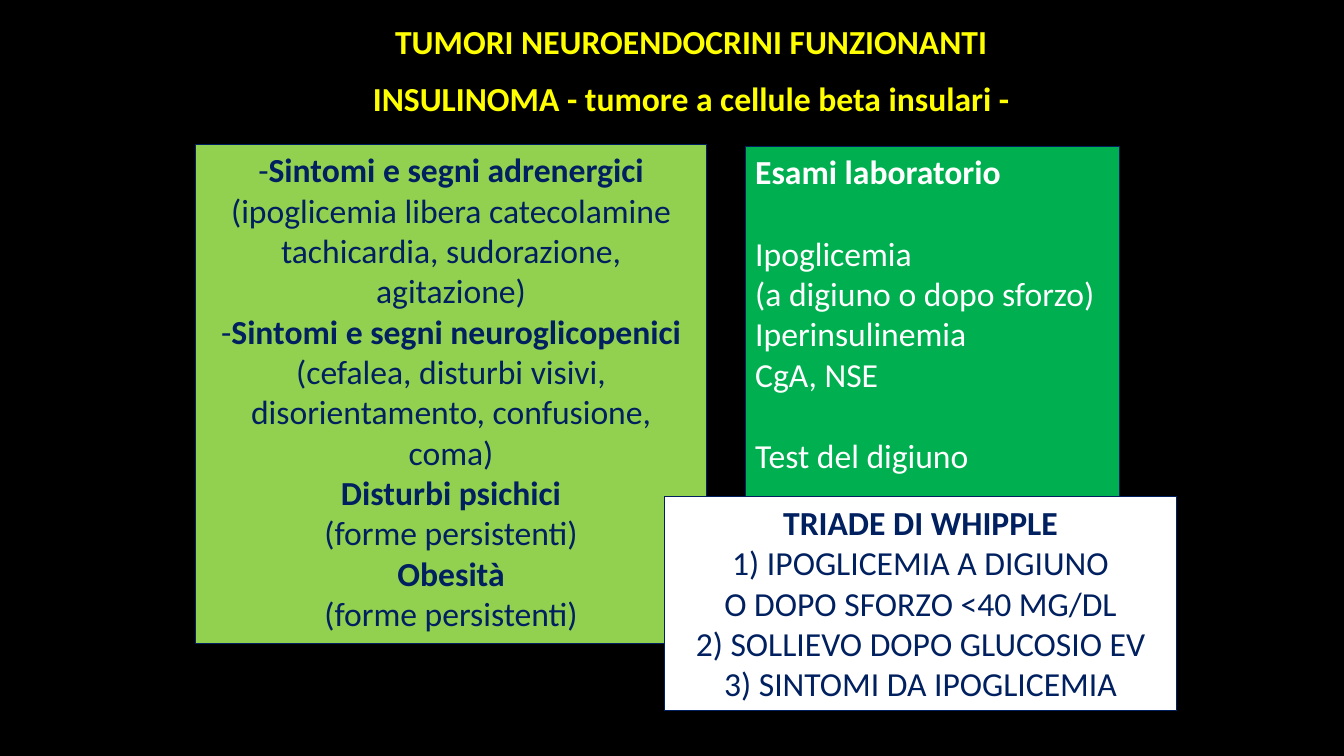
from dataclasses import dataclass

from lxml import etree
from pptx import Presentation
from pptx.dml.color import RGBColor
from pptx.enum.shapes import MSO_SHAPE
from pptx.enum.text import MSO_ANCHOR, MSO_AUTO_SIZE, PP_ALIGN
from pptx.oxml.ns import qn
from pptx.util import Inches, Pt

RECTANGLE = MSO_SHAPE.RECTANGLE
TOP = MSO_ANCHOR.TOP
FIXED_SIZE = MSO_AUTO_SIZE.NONE
LEFT, CENTER = PP_ALIGN.LEFT, PP_ALIGN.CENTER
TWO_CONTENT = 3


@dataclass(frozen=True)
class Theme:
    """Colours, font and sizes of the slide."""
    background: str = "000000"
    heading: str = "FFFF00"
    navy: str = "002060"
    white: str = "FFFFFF"
    lime: str = "92D050"
    green: str = "00B050"
    font: str = "Calibri"
    size: float = 24
    border: float = 0.75
    gap: float = 29.3


def add_text(paragraph, text, *, font, size, color, bold=False):
    """Append one formatted run to a paragraph."""
    run = paragraph.add_run()
    run.text = text
    run.font.name = font
    run.font.size = Pt(size)
    run.font.bold = bold
    run.font.color.rgb = RGBColor.from_string(color)


class SlideBuilder:
    """Draws styled elements, placed in percent of the slide's size."""

    def __init__(self, deck, theme):
        """Start a slide with the theme's background."""
        self.deck, self.theme = deck, theme
        self.slide = deck.slides.add_slide(deck.slide_layouts[TWO_CONTENT])
        backdrop = self.slide.background.fill
        backdrop.solid()
        backdrop.fore_color.rgb = RGBColor.from_string(theme.background)

    def area(self, left, top, width, height):
        """Turn percentages into slide lengths."""
        across, down = self.deck.slide_width / 100, self.deck.slide_height / 100
        return (int(left * across), int(top * down),
                int(width * across), int(height * down))

    def place(self, holder, area):
        """Move a placeholder to an area."""
        holder.left, holder.top, holder.width, holder.height = self.area(*area)

    def set_lines(self, holder, lines, color, align, spacing=1.0, gaps=()):
        """Fill a holder with lines, each a list of (text, bold) parts."""
        frame = holder.text_frame
        frame.word_wrap = True
        frame.auto_size = FIXED_SIZE
        frame.vertical_anchor = TOP
        for index, parts in enumerate(lines):
            paragraph = frame.paragraphs[0] if index == 0 else frame.add_paragraph()
            paragraph.alignment = align
            paragraph.line_spacing = spacing
            paragraph.space_before = Pt(self.theme.gap if index in gaps else 0)
            paragraph.space_after = Pt(0)
            properties = paragraph._p.get_or_add_pPr()
            properties.set("marL", "0")
            properties.set("indent", "0")
            etree.SubElement(properties, qn("a:buNone"))
            for text, bold in parts:
                add_text(paragraph, text, font=self.theme.font,
                         size=self.theme.size, color=color, bold=bold)

    def paint(self, holder, fill):
        """Give a holder its fill and the thin navy border."""
        holder.fill.solid()
        holder.fill.fore_color.rgb = RGBColor.from_string(fill)
        holder.line.color.rgb = RGBColor.from_string(self.theme.navy)
        holder.line.width = Pt(self.theme.border)

    def title(self, lines, area):
        """Set the slide title."""
        heading = self.slide.shapes.title
        self.place(heading, area)
        self.set_lines(heading, lines, self.theme.heading, CENTER, spacing=1.4)

    def list_panel(self, slot, lines, area, fill, color, align, gaps=()):
        """Set a list in a body placeholder with a coloured ground."""
        panel = self.slide.placeholders[slot]
        self.place(panel, area)
        self.paint(panel, fill)
        self.set_lines(panel, lines, color, align, gaps=gaps)

    def callout(self, lines, area, fill, color):
        """Set centred lines in a box over the panels."""
        box = self.slide.shapes.add_shape(RECTANGLE, *self.area(*area))
        box.shadow.inherit = False
        self.paint(box, fill)
        self.set_lines(box, lines, color, CENTER)


def strong(text):
    """Make a line in bold."""
    return [(text, True)]


def plain(text):
    """Make a line in regular weight."""
    return [(text, False)]


def main():
    """Build and save the slide."""
    deck = Presentation()
    deck.slide_width, deck.slide_height = Inches(13.33), Inches(7.5)
    theme = Theme()
    insulinoma = SlideBuilder(deck, theme)

    insulinoma.title(
        [strong("TUMORI NEUROENDOCRINI FUNZIONANTI"),
         strong("INSULINOMA - tumore a cellule beta insulari -")],
        (25.81, 0, 51.24, 24))

    symptoms = [
        [("-", False), ("Sintomi e segni adrenergici ", True),
         ("(ipoglicemia libera catecolamine", False)],
        plain("tachicardia, sudorazione, agitazione)"),
        [("-", False), ("Sintomi e segni neuroglicopenici ", True),
         ("(cefalea, disturbi visivi, disorientamento, confusione, coma)", False)],
        strong("Disturbi psichici"),
        plain("(forme persistenti)"),
        strong("Obesità"),
        plain("(forme persistenti)"),
    ]
    insulinoma.list_panel(1, symptoms, (14.55, 19.07, 38.03, 66),
                          theme.lime, theme.navy, CENTER)

    laboratory = [
        strong("Esami laboratorio"),
        plain("Ipoglicemia"),
        plain("(a digiuno o dopo sforzo)"),
        plain("Iperinsulinemia"),
        plain("CgA, NSE"),
        plain("Test del digiuno"),
    ]
    insulinoma.list_panel(2, laboratory, (55.44, 19.33, 27.83, 49.87),
                          theme.green, theme.white, LEFT, gaps=(1, 5))

    whipple_triad = [
        strong("TRIADE DI WHIPPLE"),
        plain("1) IPOGLICEMIA A DIGIUNO"),
        plain("O DOPO SFORZO <40 MG/DL"),
        plain("2) SOLLIEVO DOPO GLUCOSIO EV"),
        plain("3) SINTOMI DA IPOGLICEMIA"),
    ]
    insulinoma.callout(whipple_triad, (49.44, 65.73, 38.11, 28.27),
                       theme.white, theme.navy)

    deck.save("out.pptx")


if __name__ == "__main__":
    main()
